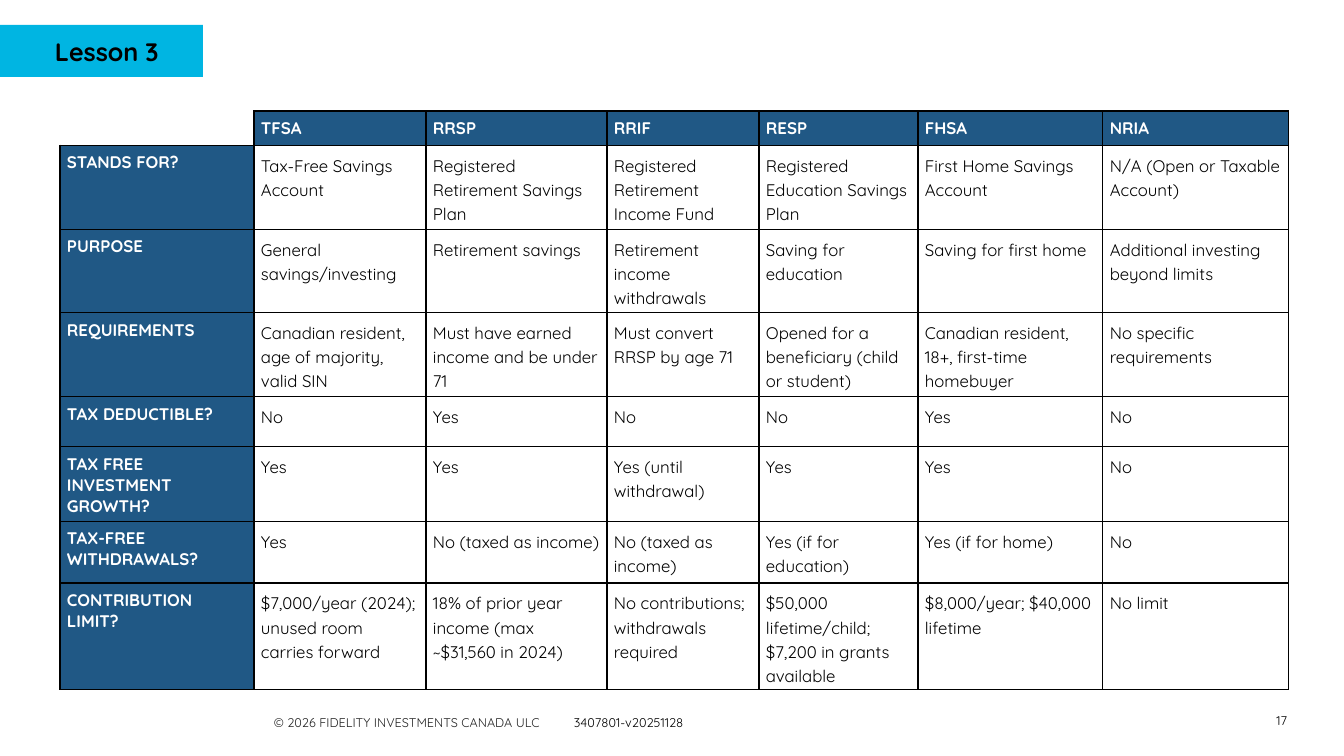
from lxml import etree
from pptx import Presentation
from pptx.dml.color import RGBColor
from pptx.enum.shapes import MSO_SHAPE
from pptx.enum.text import MSO_ANCHOR, PP_ALIGN
from pptx.oxml.ns import qn
from pptx.util import Emu, Pt

FONT = "Quicksand"
BLACK, WHITE, NAVY, CYAN, GREY = "000000", "FFFFFF", "205885", "00B5E2", "222222"
COLUMN_WIDTHS = [194, 172, 181, 152, 159, 185, 186]
ROW_HEIGHTS = [34, 84, 83, 84, 50, 74, 62, 106]
CELL_MARGIN = 7
ACCOUNTS = [
    ["", "TFSA", "RRSP", "RRIF", "RESP", "FHSA", "NRIA"],
    ["STANDS FOR?", "Tax-Free Savings Account", "Registered Retirement Savings Plan",
     "Registered Retirement Income Fund", "Registered Education Savings Plan",
     "First Home Savings Account", "N/A (Open or Taxable Account)"],
    ["PURPOSE", "General savings/investing", "Retirement savings",
     "Retirement income withdrawals", "Saving for education",
     "Saving for first home", "Additional investing beyond limits"],
    ["REQUIREMENTS", "Canadian resident, age of majority, valid SIN",
     "Must have earned income and be under 71", "Must convert RRSP by age 71",
     "Opened for a beneficiary (child or student)",
     "Canadian resident, 18+, first-time homebuyer", "No specific requirements"],
    ["TAX DEDUCTIBLE?", "No", "Yes", "No", "No", "Yes", "No"],
    ["TAX FREE INVESTMENT GROWTH?", "Yes", "Yes", "Yes (until withdrawal)",
     "Yes", "Yes", "No"],
    ["TAX-FREE WITHDRAWALS?", "Yes", "No (taxed as income)", "No (taxed as income)",
     "Yes (if for education)", "Yes (if for home)", "No"],
    ["CONTRIBUTION LIMIT?", "$7,000/year (2024); unused room carries forward",
     "18% of prior year income (max ~$31,560 in 2024)",
     "No contributions; withdrawals required",
     "$50,000 lifetime/child; $7,200 in grants available",
     "$8,000/year; $40,000 lifetime", "No limit"],
]


def px(length):
    return Emu(round(length * 914400 / 100.8))


def rgb(color):
    return RGBColor.from_string(color)


def style(font, size, color, bold=False):
    font.name, font.size, font.bold = FONT, Pt(size), bold
    font.color.rgb = rgb(color)


def add_text(slide, box, text, size, color=BLACK, bold=False):
    """Add a one-paragraph text box and return its frame."""
    frame = slide.shapes.add_textbox(*map(px, box)).text_frame
    frame.word_wrap = True
    paragraph = frame.paragraphs[0]
    paragraph.text = text
    style(paragraph.font, size, color, bold)
    return frame


def add_lesson_tag(slide, left, top, width, height):
    tag = slide.shapes.add_shape(MSO_SHAPE.RECTANGLE, *map(px, (left, top, width, height)))
    tag.shadow.inherit = False
    tag.fill.solid()
    tag.fill.fore_color.rgb = rgb(CYAN)
    tag.line.fill.background()
    add_text(slide, (left + 45, top + 6, width - 45, 40), "Lesson 3", 18, bold=True)


def set_borders(cell, hidden=()):
    properties = cell._tc.get_or_add_tcPr()
    for index, side in enumerate("LRTB"):
        line = etree.Element(qn(f"a:ln{side}"), w=str(Pt(1)))
        if side in hidden:
            etree.SubElement(line, qn("a:noFill"))
        else:
            fill = etree.SubElement(line, qn("a:solidFill"))
            etree.SubElement(fill, qn("a:srgbClr"), val=BLACK)
        properties.insert(index, line)


def fill_cell(cell, text, is_heading):
    cell.margin_left = cell.margin_right = px(CELL_MARGIN)
    cell.margin_top = cell.margin_bottom = px(CELL_MARGIN)
    cell.text = text
    paragraph = cell.text_frame.paragraphs[0]
    if is_heading:
        cell.fill.solid()
        cell.fill.fore_color.rgb = rgb(NAVY)
        style(paragraph.font, 12, WHITE, bold=True)
    else:
        cell.fill.background()
        paragraph.line_spacing = 1.15
        style(paragraph.font, 12, BLACK)
    set_borders(cell)


def clear_corner(cell):
    cell.margin_top = cell.margin_bottom = 0
    style(cell.text_frame.paragraphs[0].font, 12, BLACK)
    cell.fill.background()
    set_borders(cell, hidden="LT")


def add_account_table(slide, left, top):
    box = (left, top, sum(COLUMN_WIDTHS), sum(ROW_HEIGHTS))
    table = slide.shapes.add_table(len(ROW_HEIGHTS), len(COLUMN_WIDTHS), *map(px, box)).table
    table.first_row = table.horz_banding = False
    for column, width in zip(table.columns, COLUMN_WIDTHS):
        column.width = px(width)
    for row, height in zip(table.rows, ROW_HEIGHTS):
        row.height = px(height)
    for row_index, texts in enumerate(ACCOUNTS):
        for column_index, text in enumerate(texts):
            cell = table.cell(row_index, column_index)
            if text:
                fill_cell(cell, text, row_index == 0 or column_index == 0)
            else:
                clear_corner(cell)


def add_footer(slide, left, top, right):
    frame = add_text(slide, (left, top, 529, 25), "", 9)
    paragraph = frame.paragraphs[0]
    properties = paragraph._p.get_or_add_pPr()
    tabs = etree.Element(qn("a:tabLst"))
    etree.SubElement(tabs, qn("a:tab"), pos=str(px(300)), algn="l")
    properties.insert(0, tabs)
    for text, color in (("© 2026 FIDELITY INVESTMENTS CANADA ULC\t", GREY),
                        ("3407801-v20251128", BLACK)):
        run = paragraph.add_run()
        run.text = text
        run.font.color.rgb = rgb(color)

    number = add_text(slide, (right - 70, top + 2, 70, 18), "17", 9)
    number.vertical_anchor = MSO_ANCHOR.MIDDLE
    number.paragraphs[0].alignment = PP_ALIGN.RIGHT


def main():
    presentation = Presentation()
    presentation.slide_width, presentation.slide_height = px(1344), px(756)
    slide = presentation.slides.add_slide(presentation.slide_layouts[6])
    add_lesson_tag(slide, 0, 25, 203, 52)
    add_footer(slide, 264, 710, 1297)
    add_account_table(slide, 60, 111)
    presentation.save("out.pptx")


if __name__ == "__main__":
    main()
